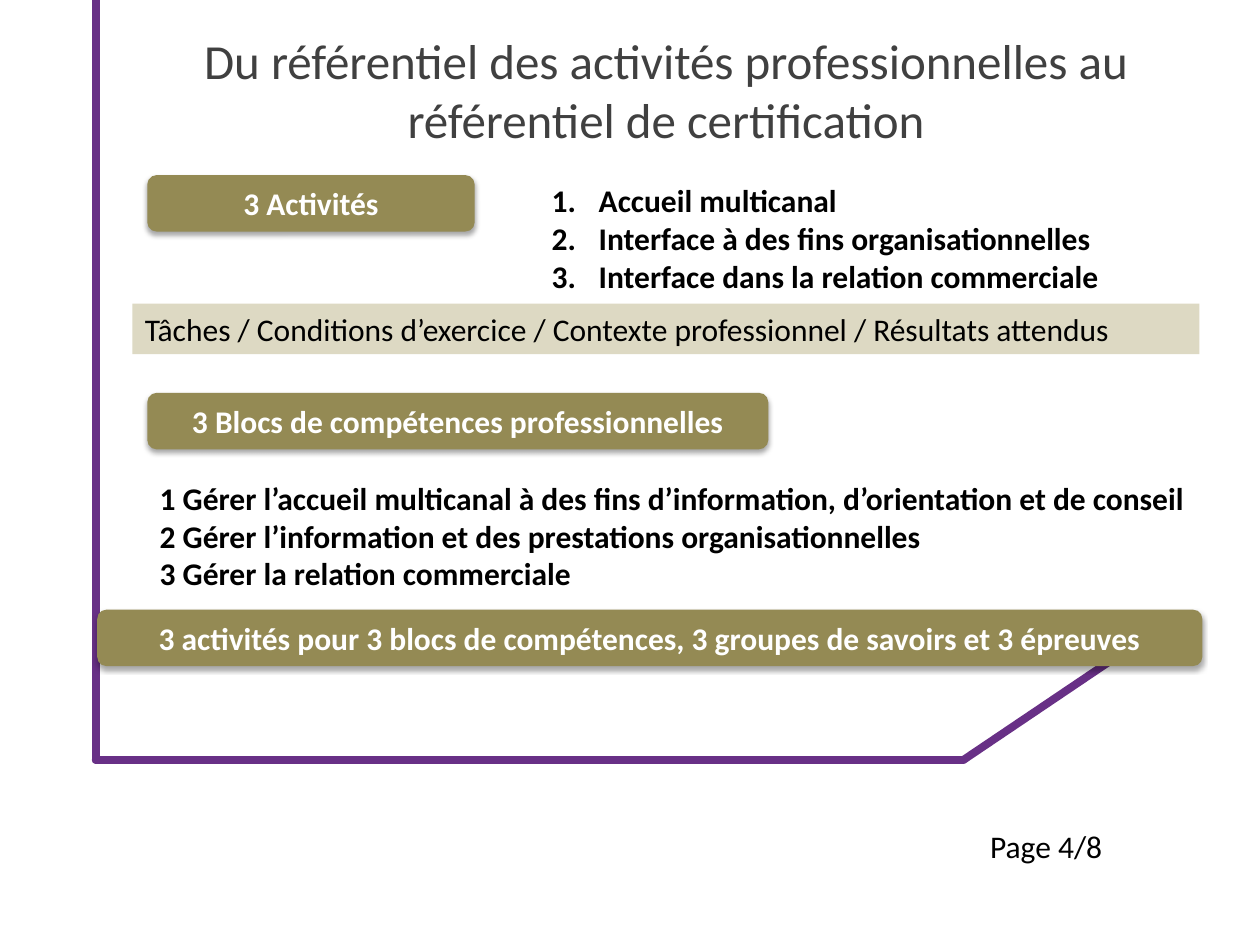
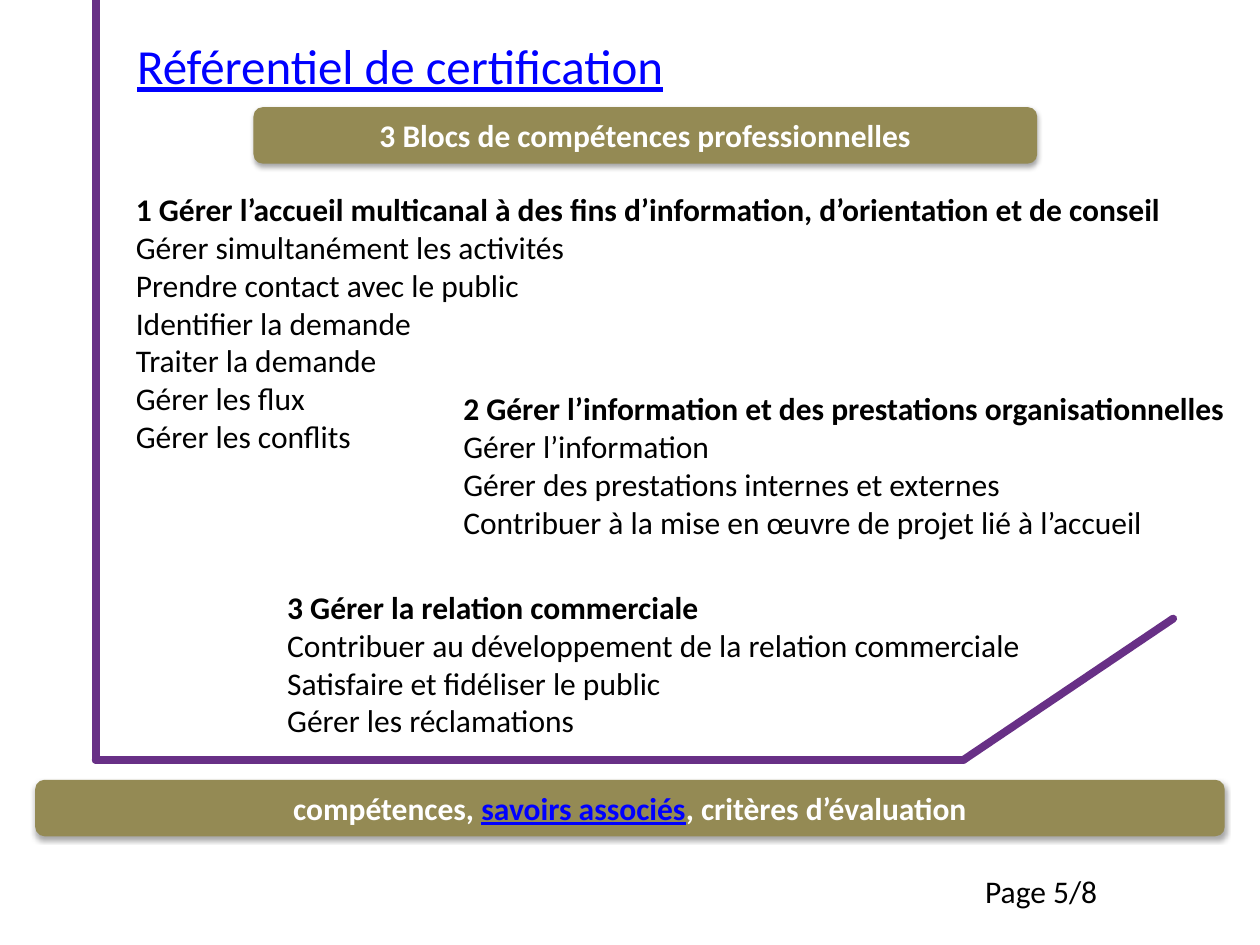
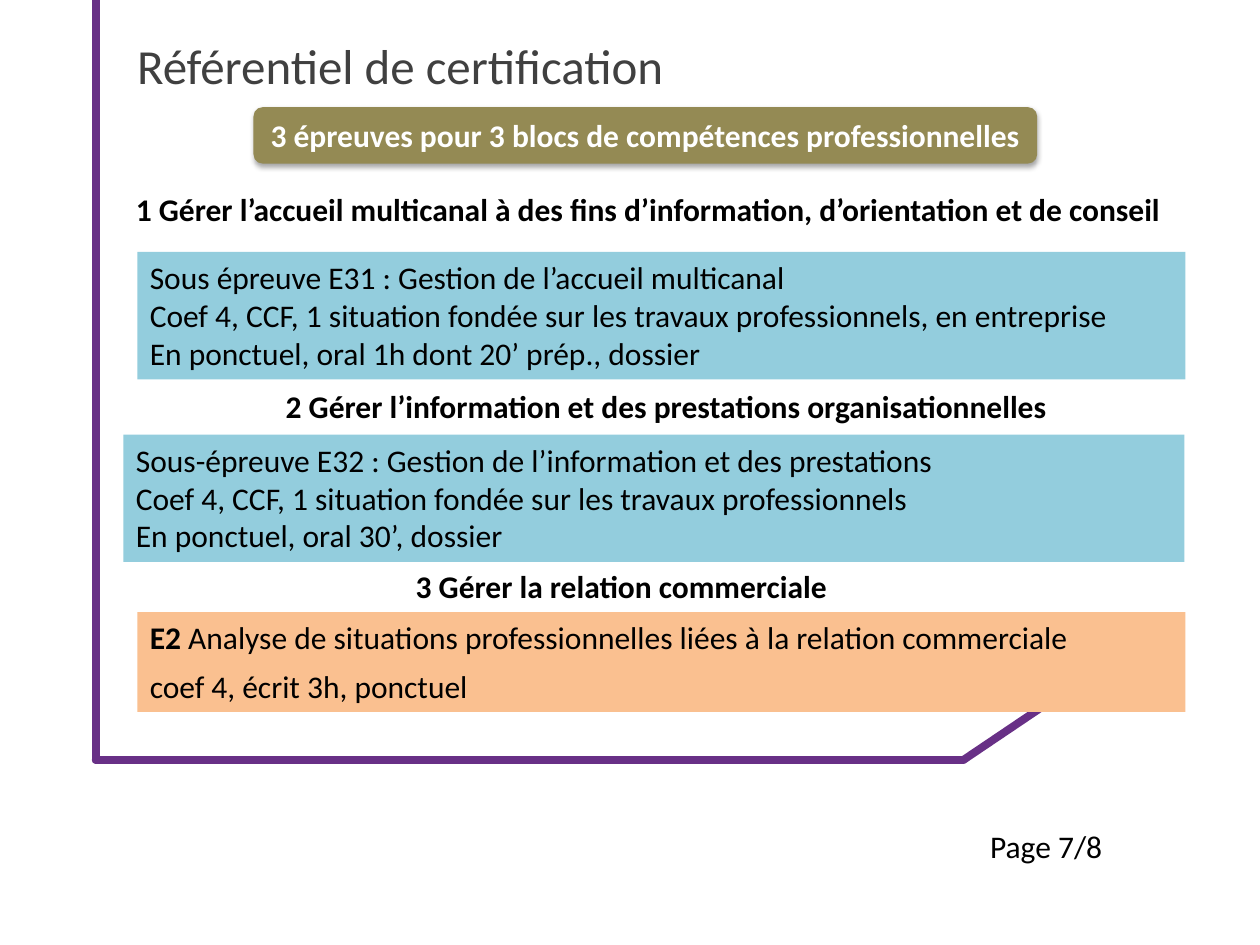
from dataclasses import dataclass, replace

from lxml import etree
from pptx import Presentation
from pptx.dml.color import RGBColor
from pptx.enum.shapes import MSO_CONNECTOR as Connector, MSO_SHAPE as Shape
from pptx.enum.text import MSO_ANCHOR as Anchor, MSO_AUTO_SIZE as AutoSize, PP_ALIGN as Align
from pptx.oxml.ns import qn
from pptx.util import Cm, Pt


@dataclass(frozen=True)
class Theme:
    font: str = "Calibri"
    title_size: int = 28
    body_size: int = 18
    title: str = "404040"
    text: str = "000000"
    white: str = "FFFFFF"
    link: str = "0000FF"
    frame: str = "683086"
    frame_width: float = 4.5
    olive: str = "948A54"
    sand: str = "DDD9C3"
    blue: str = "93CDDD"
    orange: str = "FAC090"


@dataclass(frozen=True)
class Style:
    size: int
    color: str
    bold: bool = False
    underline: bool = False


@dataclass(frozen=True)
class Box:
    """A region in centimetres."""
    left: float
    top: float
    width: float
    height: float = 1.02

    def lengths(self):
        return [Cm(v) for v in (self.left, self.top, self.width, self.height)]


THEME = Theme()
BODY = Style(THEME.body_size, THEME.text)
STRONG = replace(BODY, bold=True)
ON_OLIVE = replace(STRONG, color=THEME.white)
OLIVE_LINK = replace(STRONG, color=THEME.link, underline=True)
TITLE = Style(THEME.title_size, THEME.title)
TITLE_LINK = replace(TITLE, color=THEME.link, underline=True)

PILL_HEIGHT = 1.14
TITLE_BOX = Box(2.51, 0.41, 22.17, 1.8)
TOP_PILL = Box(5.11, 2.16, 15.8, PILL_HEIGHT)
PAGE_BOX = Box(19.71, 16.54, 3.4)
BLOCKS = [
    "1 Gérer l’accueil multicanal à des fins d’information, d’orientation et de conseil",
    "2 Gérer l’information et des prestations organisationnelles",
    "3 Gérer la relation commerciale",
]


def lines(texts, style=BODY):
    """One single-run paragraph per text."""
    return [[(text, style)] for text in texts]


def write(frame, paragraphs, align=Align.LEFT, anchor=Anchor.TOP, space_after=0, numbered=False):
    frame.word_wrap = True
    frame.auto_size = AutoSize.NONE
    frame.vertical_anchor = anchor
    for index, runs in enumerate(paragraphs):
        paragraph = frame.paragraphs[0] if index == 0 else frame.add_paragraph()
        if numbered:
            number(paragraph)
        paragraph.alignment = align
        paragraph.space_after = Pt(space_after)
        for text, style in runs:
            run = paragraph.add_run()
            run.text = text
            font = run.font
            font.name, font.size = THEME.font, Pt(style.size)
            font.bold, font.underline = style.bold, style.underline
            font.color.rgb = RGBColor.from_string(style.color)


def number(paragraph, indent=Cm(0.95)):
    properties = paragraph._p.get_or_add_pPr()
    properties.set("marL", str(indent))
    properties.set("indent", str(-indent))
    etree.SubElement(properties, qn("a:buFont"), typeface="+mj-lt")
    etree.SubElement(properties, qn("a:buAutoNum"), type="arabicPeriod")


def add_frame(slide):
    left, base, bend = 1.93, 15.32, 19.42
    sides = [(left, base, bend, base), (bend, base, 23.65, 12.47), (left, base, left, 0)]
    for ends in sides:
        side = slide.shapes.add_connector(Connector.STRAIGHT, *[Cm(v) for v in ends])
        side.line.color.rgb = RGBColor.from_string(THEME.frame)
        side.line.width = Pt(THEME.frame_width)
        properties = side._element.spPr
        properties.find(qn("a:ln")).set("cap", "rnd")
        etree.SubElement(properties, qn("a:effectLst"))


def add_text(slide, box, paragraphs, **layout):
    write(slide.shapes.add_textbox(*box.lengths()).text_frame, paragraphs, **layout)


def add_panel(slide, box, color, paragraphs, kind=Shape.RECTANGLE, **layout):
    panel = slide.shapes.add_shape(kind, *box.lengths())
    panel.shadow.inherit = False
    panel.fill.solid()
    panel.fill.fore_color.rgb = RGBColor.from_string(color)
    panel.line.fill.background()
    write(panel.text_frame, paragraphs, **layout)
    return panel


def add_pill(slide, box, runs):
    """Olive rounded banner with a soft shadow below it."""
    pill = add_panel(slide, box, THEME.olive, [runs], Shape.ROUNDED_RECTANGLE, align=Align.CENTER)
    effects = pill._element.spPr.find(qn("a:effectLst"))
    shadow = etree.SubElement(effects, qn("a:outerShdw"), blurRad=str(Pt(3.1)),
                              dist=str(Pt(1.8)), dir="5400000", rotWithShape="0")
    color = etree.SubElement(shadow, qn("a:srgbClr"), val="000000")
    etree.SubElement(color, qn("a:alpha"), val="35000")


def start_slide(deck, title, page, title_box=TITLE_BOX, title_style=TITLE,
                title_align=Align.LEFT, page_box=PAGE_BOX):
    slide = deck.slides.add_slide(deck.slide_layouts[5])
    heading = slide.shapes.title
    heading.left, heading.top, heading.width, heading.height = title_box.lengths()
    write(heading.text_frame, [[(title, title_style)]], title_align, Anchor.MIDDLE)
    add_frame(slide)
    add_text(slide, page_box, lines([f"Page {page}/8"]))
    return slide


def build_activities(deck):
    slide = start_slide(
        deck, "Du référentiel des activités professionnelles au référentiel de certification", 4,
        title_box=replace(TITLE_BOX, left=2.34, top=0.91), title_align=Align.CENTER)
    add_pill(slide, Box(2.97, 3.53, 6.6, PILL_HEIGHT), [("3 Activités", ON_OLIVE)])
    add_panel(slide, Box(2.67, 6.12, 21.51), THEME.sand, lines([
        "Tâches / Conditions d’exercice / Contexte professionnel / Résultats attendus"]))
    add_text(slide, Box(10.87, 3.53, 11.63, 3.33), lines([
        "Accueil multicanal",
        "Interface à des fins organisationnelles",
        "Interface dans la relation commerciale"], STRONG), numbered=True)
    add_pill(slide, Box(1.96, 12.29, 22.28, PILL_HEIGHT), [
        ("3 activités pour 3 blocs de compétences, 3 groupes de savoirs et 3 épreuves", ON_OLIVE)])
    add_pill(slide, Box(2.97, 7.92, 12.52, PILL_HEIGHT),
             [("3 Blocs de compétences professionnelles", ON_OLIVE)])
    add_text(slide, Box(2.97, 9.53, 21.21, 3.33), lines(BLOCKS, STRONG))


def build_skills(deck):
    slide = start_slide(deck, "Référentiel de certification", 5, title_style=TITLE_LINK,
                        page_box=replace(PAGE_BOX, left=19.61, top=17.45))
    skills = [
        (Box(2.49, 3.71, 22.2, 5.64), [
            "Gérer simultanément les activités", "Prendre contact avec le public",
            "Identifier la demande", "Traiter la demande",
            "Gérer les flux", "Gérer les conflits"]),
        (Box(9.09, 7.72, 15.93, 3.33), [
            "Gérer l’information", "Gérer des prestations internes et externes",
            "Contribuer à la mise en œuvre de projet lié à l’accueil"]),
        (Box(5.54, 11.73, 15.77, 3.33), [
            "Contribuer au développement de la relation commerciale",
            "Satisfaire et fidéliser le public", "Gérer les réclamations"]),
    ]
    for block, (box, details) in zip(BLOCKS, skills):
        add_text(slide, box, lines([block], STRONG) + lines(details))
    add_pill(slide, TOP_PILL, [("3 Blocs de compétences professionnelles", ON_OLIVE)])
    add_pill(slide, Box(0.71, 15.72, 23.98, PILL_HEIGHT), [
        ("compétences, ", ON_OLIVE), ("savoirs associés", OLIVE_LINK),
        (", critères d’évaluation", ON_OLIVE)])


def build_exams(deck):
    slide = start_slide(deck, "Référentiel de certification", 7)
    add_pill(slide, TOP_PILL,
             [("3 épreuves pour 3 blocs de compétences professionnelles", ON_OLIVE)])
    exams = [
        (Box(2.49, 3.71, 22.2), Box(2.77, 5.08, 21.13, 2.57), THEME.blue, 0, lines([
            "Sous épreuve E31 : Gestion de l’accueil multicanal",
            "Coef 4, CCF, 1 situation fondée sur les travaux professionnels, en entreprise",
            "En ponctuel, oral 1h dont 20’ prép., dossier"])),
        (Box(5.51, 7.67, 19.53), Box(2.49, 8.76, 21.39, 2.57), THEME.blue, 0, lines([
            "Sous-épreuve E32 : Gestion de l’information et des prestations",
            "Coef 4, CCF, 1 situation fondée sur les travaux professionnels",
            "En ponctuel, oral 30’, dossier"])),
        (Box(8.13, 11.3, 15.77), Box(2.77, 12.34, 21.13, 2.01), THEME.orange, 6, [
            [("E2", STRONG),
             (" Analyse de situations professionnelles liées à la relation commerciale", BODY)],
            [("coef 4, écrit 3h, ponctuel", BODY)]]),
    ]
    for block, (heading_box, exam_box, color, gap, details) in zip(BLOCKS, exams):
        add_text(slide, heading_box, lines([block], STRONG))
        add_panel(slide, exam_box, color, details, space_after=gap)


def main():
    deck = Presentation()
    deck.slide_width, deck.slide_height = Cm(25.4), Cm(19.05)
    for build in (build_activities, build_skills, build_exams):
        build(deck)
    deck.save("out.pptx")


if __name__ == "__main__":
    main()
